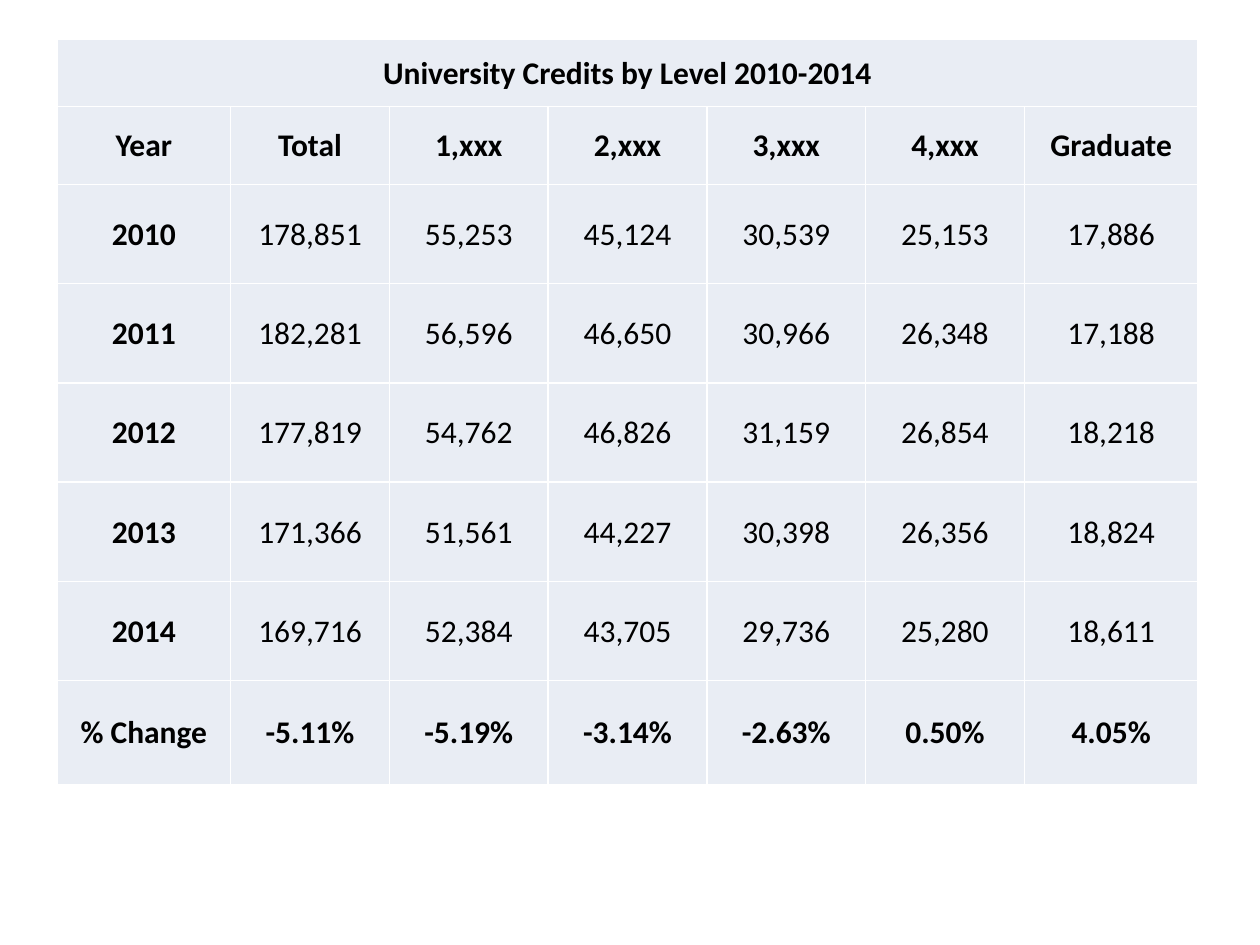
from lxml.etree import SubElement
from pptx import Presentation
from pptx.dml.color import RGBColor
from pptx.enum.text import MSO_ANCHOR, PP_ALIGN
from pptx.oxml.ns import qn
from pptx.util import Cm, Pt

TITLE = "University Credits by Level 2010-2014"
ROWS = [
    ["Year", "Total", "1,xxx", "2,xxx", "3,xxx", "4,xxx", "Graduate"],
    ["2010", "178,851", "55,253", "45,124", "30,539", "25,153", "17,886"],
    ["2011", "182,281", "56,596", "46,650", "30,966", "26,348", "17,188"],
    ["2012", "177,819", "54,762", "46,826", "31,159", "26,854", "18,218"],
    ["2013", "171,366", "51,561", "44,227", "30,398", "26,356", "18,824"],
    ["2014", "169,716", "52,384", "43,705", "29,736", "25,280", "18,611"],
    ["% Change", "-5.11%", "-5.19%", "-3.14%", "-2.63%", "0.50%", "4.05%"],
]
COL_WIDTHS = [3.5] + [3.2] * 5 + [3.5]
ROW_HEIGHTS = [1.36, 1.57] + [2] * 5 + [2.1]
CELL_FORMAT = {
    "vertical_anchor": MSO_ANCHOR.MIDDLE,
    "margin_left": Cm(0.02),
    "margin_right": Cm(0.02),
    "margin_top": Cm(0.02),
    "margin_bottom": 0,
}


def rgb(value):
    return RGBColor.from_string(value)


def set_borders(cell, color, width):
    tc_pr = cell._tc.get_or_add_tcPr()
    for side in ("lnL", "lnR", "lnT", "lnB"):
        ln = SubElement(tc_pr, qn(f"a:{side}"), w=str(Pt(width)))
        fill = SubElement(ln, qn("a:solidFill"))
        SubElement(fill, qn("a:srgbClr"), val=color)


def style_cell(cell):
    set_borders(cell, "FFFFFF", 1)
    cell.fill.solid()
    cell.fill.fore_color.rgb = rgb("E9EDF4")
    for name, value in CELL_FORMAT.items():
        setattr(cell, name, value)


def write_cell(cell, text, bold):
    p = cell.text_frame.paragraphs[0]
    p.alignment = PP_ALIGN.CENTER
    r = p.add_run()
    r.text = text
    for name, value in {"name": "Calibri", "size": Pt(18), "bold": bold}.items():
        setattr(r.font, name, value)
    r.font.color.rgb = rgb("000000")


def add_credits_table(slide, left, top):
    n_rows, n_cols = len(ROW_HEIGHTS), len(COL_WIDTHS)
    table = slide.shapes.add_table(
        n_rows, n_cols, Cm(left), Cm(top),
        Cm(sum(COL_WIDTHS)), Cm(sum(ROW_HEIGHTS))).table
    for col, width in zip(table.columns, COL_WIDTHS):
        col.width = Cm(width)
    for row, height in zip(table.rows, ROW_HEIGHTS):
        row.height = Cm(height)
    for cell in table.iter_cells():
        style_cell(cell)

    # Title row across all columns
    table.cell(0, 0).merge(table.cell(0, n_cols - 1))
    write_cell(table.cell(0, 0), TITLE, True)

    # Header, yearly credits and change; only the yearly figures are not bold
    for i, values in enumerate(ROWS, 1):
        for j, text in enumerate(values):
            write_cell(table.cell(i, j), text, j == 0 or i in (1, n_rows - 1))


def main():
    prs = Presentation()
    prs.slide_width, prs.slide_height = Cm(25.4), Cm(19.05)
    slide = prs.slides.add_slide(prs.slide_layouts[6])
    add_credits_table(slide, 1.15, 0.79)
    prs.save("out.pptx")


if __name__ == "__main__":
    main()
